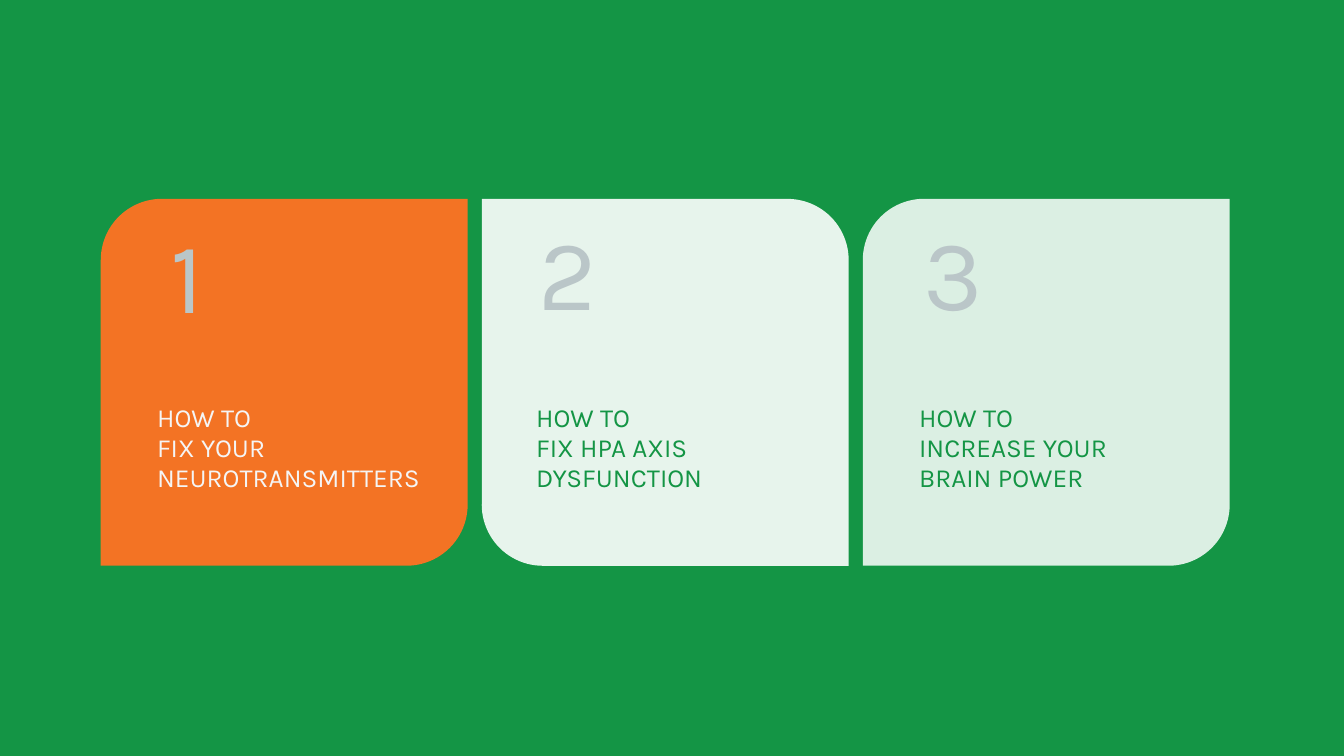
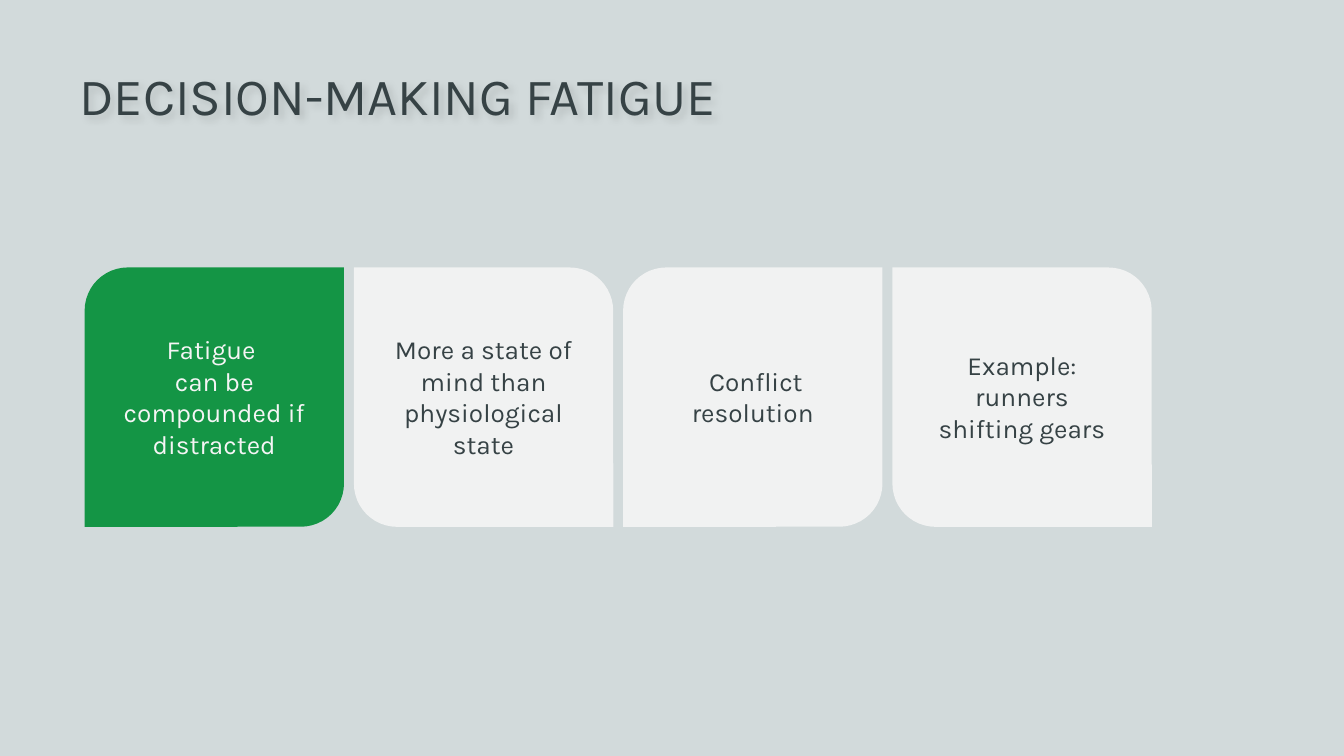
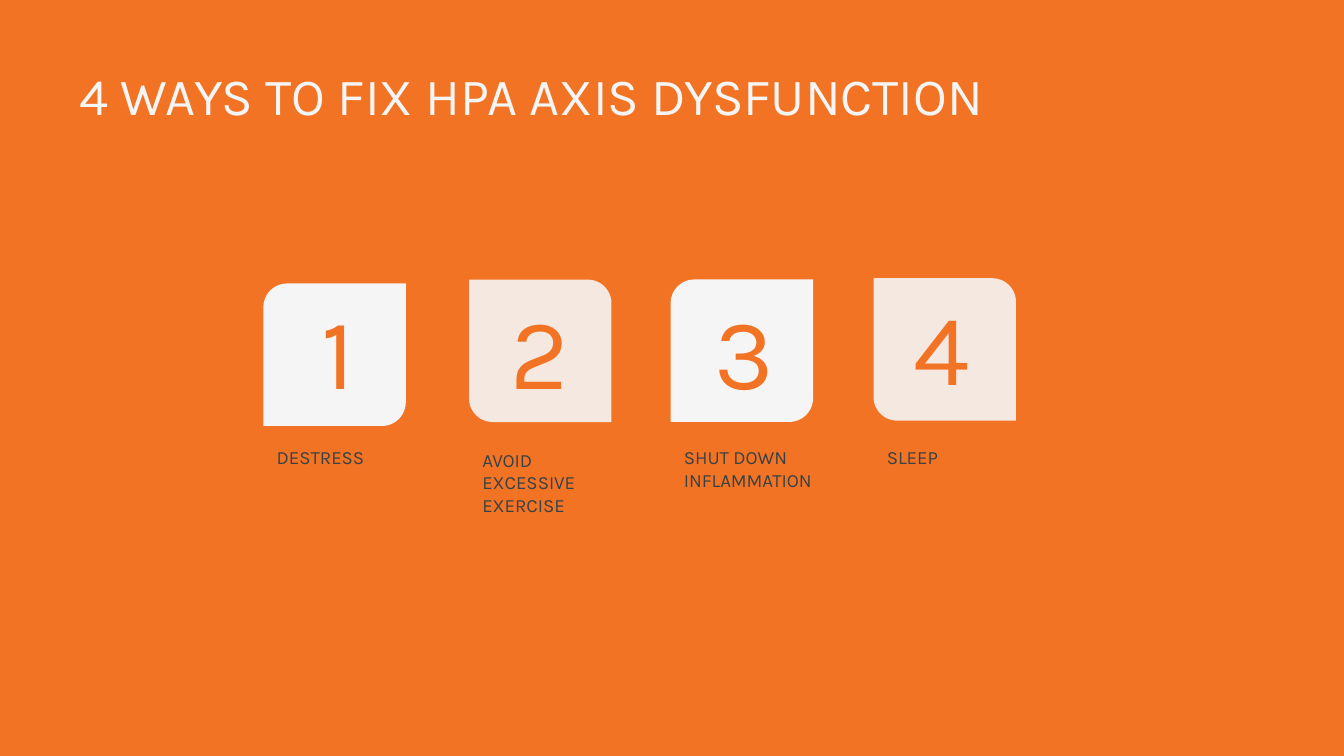
from dataclasses import dataclass
from typing import Optional

from lxml import etree
from pptx import Presentation
from pptx.dml.color import RGBColor
from pptx.enum import shapes, text
from pptx.oxml import ns
from pptx.util import Inches, Pt

GREEN = RGBColor(0x14, 0x95, 0x45)
ORANGE = RGBColor(0xF3, 0x73, 0x24)
MIST = RGBColor(0xD2, 0xDA, 0xDB)
SILVER = RGBColor(0xBA, 0xC6, 0xC8)
SLATE = RGBColor(0x36, 0x42, 0x45)
OFF_WHITE = RGBColor(0xF5, 0xF5, 0xF5)
WHITE = RGBColor(0xFF, 0xFF, 0xFF)
FONT = "Karla"
SLIDE_WIDTH = Inches(10)
SLIDE_HEIGHT = SLIDE_WIDTH * 9 // 16
TITLE_ONLY, BLANK = 5, 6


@dataclass(frozen=True)
class Tile:
    left: float
    top: float
    side: float
    color: RGBColor
    opacity: int = 100
    turned: bool = False


@dataclass(frozen=True)
class Label:
    wording: str
    left: float
    top: float
    width: float
    height: float
    size: int
    color: RGBColor
    centred: bool = False
    middle: bool = False
    spacing: Optional[int] = None


def write(frame, wording: str, size: int, color: RGBColor, centred: bool = False) -> None:
    paragraph = frame.paragraphs[0]
    paragraph.alignment = text.PP_ALIGN.CENTER if centred else text.PP_ALIGN.LEFT
    for index, line in enumerate(wording.split("\n")):
        if index:
            paragraph.add_line_break()
        run = paragraph.add_run()
        run.text = line
        run.font.name = FONT
        run.font.size = Pt(size)
        run.font.color.rgb = color


def paint(shape, color: RGBColor) -> None:
    shape.shadow.inherit = False
    shape.line.fill.background()
    shape.fill.solid()
    shape.fill.fore_color.rgb = color


def draw_tile(group, tile: Tile) -> None:
    leaf = group.shapes.add_shape(
        shapes.MSO_SHAPE.ROUND_2_DIAG_RECTANGLE,
        Inches(tile.left), Inches(tile.top), Inches(tile.side), Inches(tile.side),
    )
    paint(leaf, tile.color)
    if tile.turned:
        leaf.rotation = 270
    if tile.opacity < 100:
        tint = leaf.element.spPr.find(ns.qn("a:solidFill"))[0]
        etree.SubElement(tint, ns.qn("a:alpha"), val=str(tile.opacity * 1000))


def draw_label(group, label: Label) -> None:
    box = group.shapes.add_textbox(
        Inches(label.left), Inches(label.top), Inches(label.width), Inches(label.height)
    )
    frame = box.text_frame
    frame.word_wrap = True
    frame.vertical_anchor = text.MSO_ANCHOR.MIDDLE if label.middle else text.MSO_ANCHOR.TOP
    write(frame, label.wording, label.size, label.color, label.centred)
    if label.spacing:
        frame.paragraphs[0].line_spacing = Pt(label.spacing)


def draw_card(slide, tile: Tile, *labels: Label) -> None:
    group = slide.shapes.add_group_shape()
    draw_tile(group, tile)
    for label in labels:
        draw_label(group, label)


def add_slide(prs, color: RGBColor, layout: int):
    slide = prs.slides.add_slide(prs.slide_layouts[layout])
    backdrop = slide.shapes.add_shape(
        shapes.MSO_SHAPE.RECTANGLE, 0, 0, SLIDE_WIDTH, SLIDE_HEIGHT
    )
    paint(backdrop, color)
    slide.shapes.element.insert(2, backdrop.element)
    return slide


def set_title(slide, wording: str, color: RGBColor):
    title = slide.shapes.title
    title.left, title.top = Inches(0.59), Inches(0.47)
    title.width, title.height = Inches(9), Inches(0.94)
    frame = title.text_frame
    frame.margin_left = frame.margin_top = frame.margin_right = frame.margin_bottom = 0
    frame.auto_size = text.MSO_AUTO_SIZE.NONE
    frame.word_wrap = True
    frame.vertical_anchor = text.MSO_ANCHOR.TOP
    write(frame, wording, 28, color)
    return title


def add_soft_shadow(title) -> None:
    effects = etree.SubElement(title.element.spPr, ns.qn("a:effectLst"))
    shadow = etree.SubElement(
        effects, ns.qn("a:outerShdw"),
        blurRad=str(Pt(4)), dist=str(Pt(3)), dir="2700000", algn="tl", rotWithShape="0",
    )
    shade = etree.SubElement(shadow, ns.qn("a:srgbClr"), val="000000")
    etree.SubElement(shade, ns.qn("a:alpha"), val="12000")


def build_agenda(prs) -> None:
    slide = add_slide(prs, GREEN, BLANK)
    topics = [
        ("HOW TO \nFIX YOUR NEUROTRANSMITTERS", ORANGE, 100, OFF_WHITE, 0.85, 1.53, 1.07, 2.19),
        ("HOW TO \nFIX HPA AXIS DYSFUNCTION", WHITE, 90, GREEN, 3.68, 1.51, 3.89, 2.15),
        ("HOW TO \nINCREASE YOUR BRAIN POWER", WHITE, 85, GREEN, 6.55, 1.51, 6.74, 2.01),
    ]
    first, last = 0.75, 6.42
    step = (last - first) / (len(topics) - 1)
    for index, topic in enumerate(topics):
        wording, fill, opacity, ink, number_left, number_top, left, width = topic
        draw_card(
            slide,
            Tile(first + index * step, 1.48, 2.73, fill, opacity, index % 2 == 1),
            Label(str(index + 1), number_left, number_top, 1.09, 1.62, 54, SILVER, centred=True),
            Label(wording, left, 2.95, width, 2.52, 14, ink, spacing=16),
        )


def build_fatigue(prs) -> None:
    slide = add_slide(prs, MIST, TITLE_ONLY)
    add_soft_shadow(set_title(slide, "DECISION-MAKING FATIGUE", SLATE))
    points = [
        "Fatigue \ncan be compounded if distracted",
        "More a state of mind than physiological state",
        " Conflict resolution",
        "Example: runners shifting gears",
    ]
    first, last = 0.63, 6.64
    step = (last - first) / (len(points) - 1)
    for index, point in enumerate(points):
        left = first + index * step
        fill, opacity, ink = (OFF_WHITE, 90, SLATE) if index else (GREEN, 100, OFF_WHITE)
        draw_card(
            slide,
            Tile(left, 1.99, 1.93, fill, opacity, index % 2 == 1),
            Label(point, left + 0.18, 1.99, 1.57, 1.92, 14, ink, centred=True, middle=True),
        )


def build_ways(prs) -> None:
    slide = add_slide(prs, ORANGE, TITLE_ONLY)
    set_title(slide, "4 WAYS TO FIX HPA AXIS DYSFUNCTION", OFF_WHITE)
    ways = [
        ("DESTRESS", 1.96, 2.11, 2.08, 2.1, 3.27),
        ("AVOID EXCESSIVE EXERCISE", 3.49, 2.08, 3.58, 2.1, 3.29),
        ("SHUT DOWN INFLAMMATION", 4.99, 2.08, 5.1, 2.1, 3.27),
        ("SLEEP", 6.5, 2.07, 6.57, 2.07, 3.27),
    ]
    for index, (way, left, top, number_left, number_top, caption_top) in enumerate(ways):
        turned = index % 2 == 1
        draw_card(
            slide,
            Tile(left, top, 1.06, OFF_WHITE, 90 if turned else 100, turned),
            Label(str(index + 1), number_left, number_top, 0.87, 1.29, 54, ORANGE, centred=True),
            Label(way, left, caption_top, 1.18, 0.63, 10, SLATE),
        )


def main() -> None:
    prs = Presentation()
    prs.slide_width, prs.slide_height = SLIDE_WIDTH, SLIDE_HEIGHT
    prs.slide_master.background.fill.solid()
    prs.slide_master.background.fill.fore_color.rgb = OFF_WHITE
    build_agenda(prs)
    build_fatigue(prs)
    build_ways(prs)
    prs.save("out.pptx")


if __name__ == "__main__":
    main()
